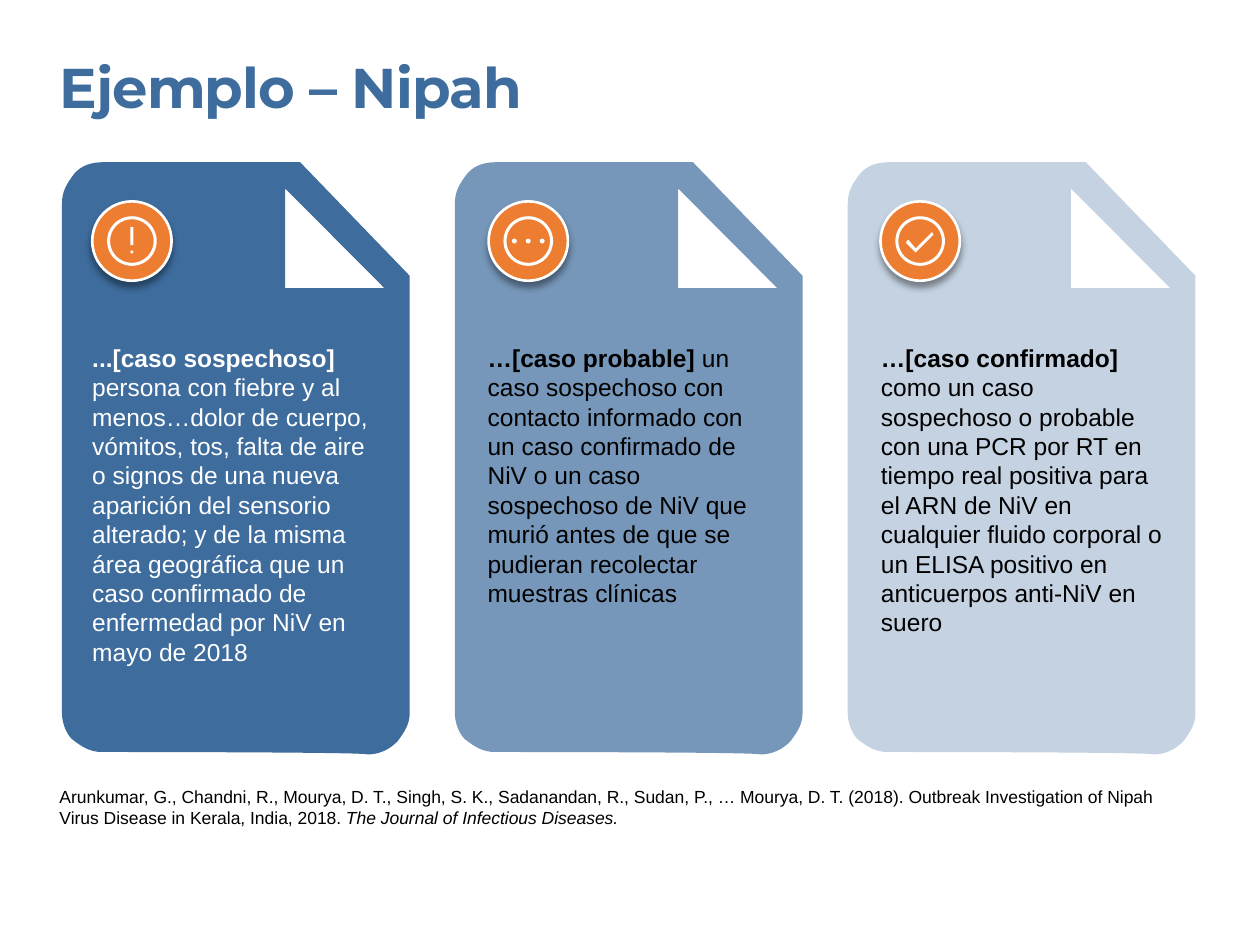
from math import cos, pi, sin, tan

from lxml import etree
from pptx import Presentation
from pptx import util as u
from pptx.dml.color import RGBColor
from pptx.enum import shapes, text
from pptx.oxml import ns

BLUE = RGBColor(0x3D, 0x6C, 0x9D)
ORANGE = RGBColor(0xED, 0x7D, 0x31)
WHITE = RGBColor(0xFF, 0xFF, 0xFF)
BLACK = RGBColor(0x00, 0x00, 0x00)


# A contour is a start point and its edges: one point is a line, three are a Bézier curve
def polygon(*points):
    return points[0], [[point] for point in points[1:]]


def circle(x, y, radius, arcs=8):
    step = 2 * pi / arcs
    pull = 4 / 3 * tan(step / 4)

    def at(angle, tangent=0):
        return (x + radius * (cos(angle) - tangent * sin(angle)),
                y + radius * (sin(angle) + tangent * cos(angle)))

    return at(0), [[at(i * step, pull), at((i + 1) * step, -pull), at((i + 1) * step)]
                   for i in range(arcs)]


# Content: all lengths in centimetres
TITLE = "Ejemplo – Nipah"
EXCLAMATION = [circle(0, 0.22, 0.03),
               polygon((-0.03, 0.08), (0.03, 0.08), (0.03, -0.28), (-0.03, -0.28))]
ELLIPSIS = [circle(x, 0, 0.05) for x in (-0.28, 0, 0.28)]
CHECK = [polygon((-0.09, 0.23), (0.27, -0.13), (0.24, -0.18), (-0.09, 0.15),
                 (-0.24, -0.03), (-0.29, 0.03))]
CASES = [
    dict(term="...[caso sospechoso] ",
         definition="persona con fiebre y al menos…dolor de cuerpo, vómitos, tos, falta de "
                    "aire o signos de una nueva aparición del sensorio alterado; y de la misma "
                    "área geográfica que un caso confirmado de enfermedad por NiV en mayo de 2018",
         ink=WHITE, opacity=100, glyph=EXCLAMATION, text_left=1.86, badge_left=1.86, height=6.58),
    dict(term="…[caso probable] ",
         definition="un caso sospechoso con contacto informado con un caso confirmado de NiV o "
                    "un caso sospechoso de NiV que murió antes de que se pudieran recolectar "
                    "muestras clínicas",
         ink=BLACK, opacity=70, glyph=ELLIPSIS, text_left=9.83, badge_left=9.85, height=5.38),
    dict(term="…[caso confirmado] ",
         definition="como un caso sospechoso o probable con una PCR por RT en tiempo real "
                    "positiva para el ARN de NiV en cualquier fluido corporal o un ELISA "
                    "positivo en anticuerpos anti-NiV en suero",
         ink=BLACK, opacity=30, glyph=CHECK, text_left=17.76, badge_left=17.75, height=6),
]
CITATION = ("Arunkumar, G., Chandni, R., Mourya, D. T., Singh, S. K., Sadanandan, R., Sudan, P., "
            "… Mourya, D. T. (2018). Outbreak Investigation of Nipah Virus Disease in Kerala, "
            "India, 2018. ")
JOURNAL = "The Journal of Infectious Diseases."

PAGE_LEFT, PAGE_TOP, PAGE_PITCH = 1.25, 3.27, 7.92
PAGE_EDGE = (0.81, 11.89), [
    [(0.56, 11.89), (0.41, 11.79), (0.2, 11.63)],
    [(0.1, 11.53), (0, 11.33), (0, 11.1)],
    [(0, 0.84)],
    [(0, 0.58), (0.1, 0.43), (0.25, 0.23)],
    [(0.41, 0.05), (0.61, 0), (0.86, 0)],
    [(4.8, 0)], [(7.01, 2.29)], [(7.01, 11.1)],
    [(7.01, 11.33), (6.91, 11.48), (6.76, 11.68)],
    [(6.6, 11.84), (6.4, 11.94), (6.15, 11.94)],
    [(6.2, 11.89), (0.81, 11.89), (0.81, 11.89)],
]
PAGE_FOLD = polygon((4.5, 2.54), (6.5, 2.54), (4.5, 0.53))
BADGE_TOP, BADGE_SIZE = 4.06, 1.6
RING = [circle(0, 0, 0.5, 12), circle(0, 0, 0.44)]

prs = Presentation()
prs.slide_width, prs.slide_height = u.Cm(25.4), u.Cm(19.05)
slide = prs.slides.add_slide(prs.slide_layouts[6])


def add_outline(contours, left, top, color):
    def place(point):
        return u.Cm(left + point[0]), u.Cm(top + point[1])

    builder = slide.shapes.build_freeform(*place(contours[0][0]))
    for index, (start, edges) in enumerate(contours):
        if index:
            builder.move_to(*place(start))
        builder.add_line_segments([place(point) for edge in edges for point in edge], close=True)
    outline = builder.convert_to_shape()
    # Merge each run of three segments that stands for a curve
    segments = iter(list(outline._element.iter(ns.qn("a:lnTo"))))
    for _, edges in contours:
        for edge in edges:
            first, *others = [next(segments) for _ in edge]
            if others:
                first.addprevious(curve := etree.Element(ns.qn("a:cubicBezTo")))
                for segment in (first, *others):
                    curve.append(segment[0])
                    segment.getparent().remove(segment)
    outline.shadow.inherit = False
    outline.fill.solid()
    outline.fill.fore_color.rgb = color
    outline.line.fill.background()
    return outline


def add_text(left, top, width, height, words, size, color, font="Arial"):
    box = slide.shapes.add_textbox(*map(u.Cm, (left, top, width, height)))
    frame = box.text_frame
    frame.word_wrap = True
    frame.auto_size = text.MSO_AUTO_SIZE.SHAPE_TO_FIT_TEXT
    frame.margin_left = frame.margin_right = frame.margin_top = frame.margin_bottom = 0
    runs = []
    for part in words:
        run = frame.paragraphs[0].add_run()
        run.text = part
        run.font.name, run.font.size = font, u.Pt(size)
        run.font.color.rgb = color
        runs.append(run)
    return runs


def add_badge(left, glyph):
    badge = slide.shapes.add_shape(shapes.MSO_SHAPE.OVAL, u.Cm(left), u.Cm(BADGE_TOP),
                                   u.Cm(BADGE_SIZE), u.Cm(BADGE_SIZE))
    badge.fill.solid()
    badge.fill.fore_color.rgb = ORANGE
    badge.line.color.rgb = WHITE
    badge.line.width = u.Pt(1.5)
    # Soft drop shadow
    badge.shadow.inherit = False
    effects = badge._element.spPr.find(ns.qn("a:effectLst"))
    shadow = etree.SubElement(effects, ns.qn("a:outerShdw"), blurRad=str(u.Pt(4)),
                              dist=str(u.Pt(3)), dir="5400000", rotWithShape="0")
    shade = etree.SubElement(shadow, ns.qn("a:srgbClr"), val=str(BLACK))
    etree.SubElement(shade, ns.qn("a:alpha"), val="40000")
    # Ring and glyph share the badge's centre
    add_outline(RING + glyph, left + BADGE_SIZE / 2, BADGE_TOP + BADGE_SIZE / 2, WHITE)


# Folded pages, paler from left to right
for column, case in enumerate(CASES):
    page = add_outline([PAGE_EDGE, PAGE_FOLD], PAGE_LEFT + column * PAGE_PITCH, PAGE_TOP, BLUE)
    if case["opacity"] < 100:
        tint = page._element.spPr.find(ns.qn("a:solidFill"))[0]
        etree.SubElement(tint, ns.qn("a:alpha"), val=str(case["opacity"] * 1000))

# Title
title, = add_text(1.2, 1.06, 20.57, 1.37, [TITLE], 32, BLUE, "Montserrat")
title.font.bold = True
title.font._element.set("spc", "-50")

# Case definitions
for case in CASES:
    term, _ = add_text(case["text_left"], 6.91, 5.79, case["height"],
                       [case["term"], case["definition"]], 14, case["ink"])
    term.font.bold = True

# Citation
_, journal = add_text(1.2, 15.85, 22.91, 0.86, [CITATION, JOURNAL], 10, BLACK)
journal.font.italic = True

# Badges
for case in CASES:
    add_badge(case["badge_left"], case["glyph"])

prs.save("out.pptx")
